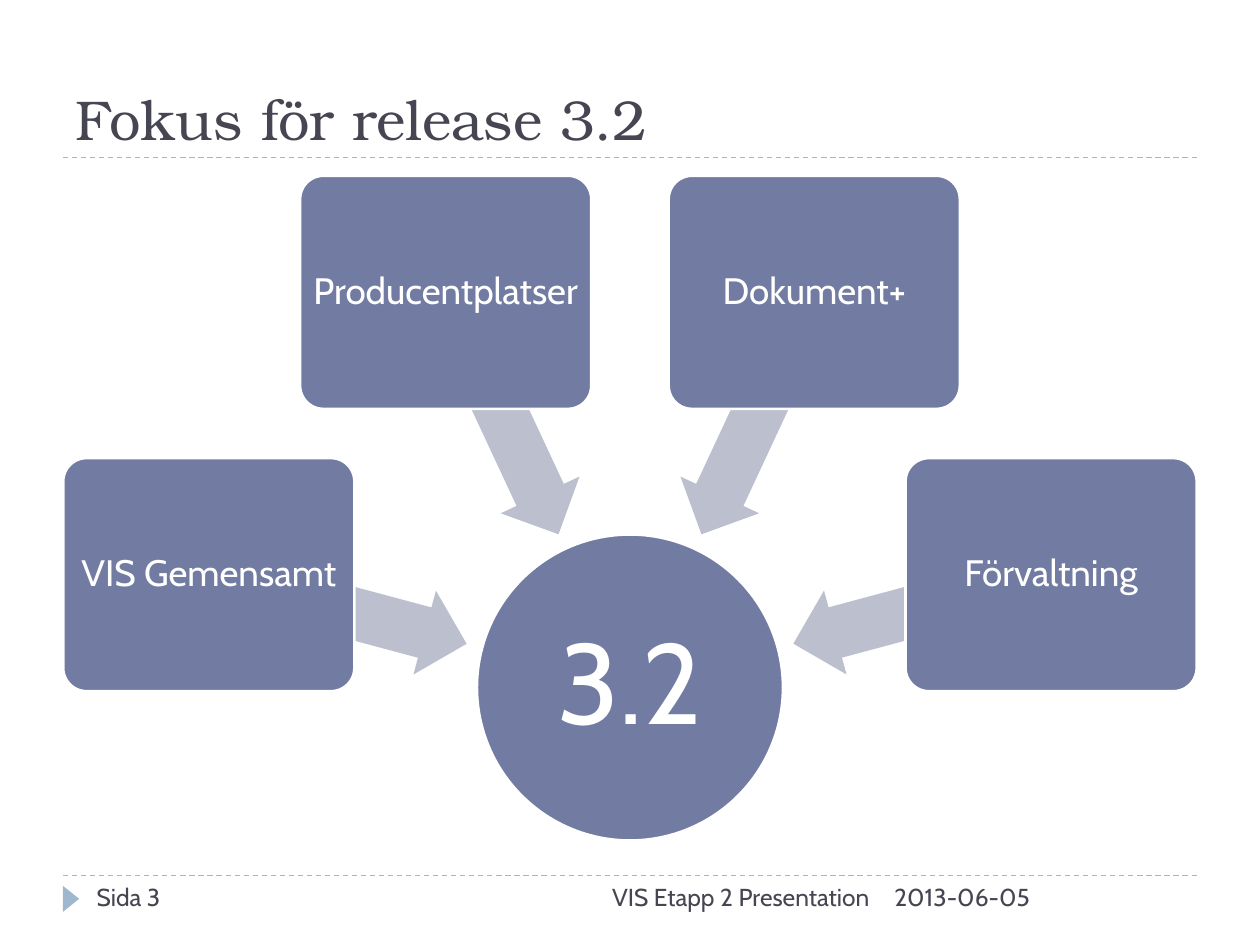
from dataclasses import dataclass
from math import cos, radians, sin

from lxml import etree
from pptx import Presentation
from pptx.dml.color import RGBColor
from pptx.enum.dml import MSO_LINE
from pptx.enum.shapes import MSO_CONNECTOR, MSO_SHAPE
from pptx.enum.text import MSO_ANCHOR, MSO_AUTO_SIZE, PP_ALIGN
from pptx.oxml.ns import qn
from pptx.shapes.autoshape import Shape
from pptx.slide import Slide
from pptx.text.text import TextFrame
from pptx.util import Cm, Pt

LEFT, CENTER, RIGHT = PP_ALIGN.LEFT, PP_ALIGN.CENTER, PP_ALIGN.RIGHT
TOP, MIDDLE, BOTTOM = MSO_ANCHOR.TOP, MSO_ANCHOR.MIDDLE, MSO_ANCHOR.BOTTOM
ROUND, OVAL = MSO_SHAPE.ROUNDED_RECTANGLE, MSO_SHAPE.OVAL
ARROW, MARK = MSO_SHAPE.LEFT_ARROW, MSO_SHAPE.ISOSCELES_TRIANGLE
STRAIGHT, DASH = MSO_CONNECTOR.STRAIGHT, MSO_LINE.DASH
NO_FIT = MSO_AUTO_SIZE.NONE


@dataclass(frozen=True)
class Theme:
    ink: str = "464653"
    main: str = "727CA3"
    pale: str = "BCBFCE"
    rule: str = "9FB8CD"
    white: str = "FFFFFF"
    head: str = "TeX Gyre Bonum"
    body: str = "Cabin"
    title: int = 32
    hub: int = 65
    box: int = 21
    foot: int = 14


@dataclass(frozen=True)
class Topic:
    text: str
    angle: int


@dataclass(frozen=True)
class Note:
    text: str
    left: float
    width: float
    align: PP_ALIGN


THEME = Theme()
TOPICS = [
    Topic("VIS Gemensamt", 195),
    Topic("Producentplatser", 245),
    Topic("Dokument+", 295),
    Topic("Förvaltning", 345),
]
NOTES = [
    Note("2013-06-05", 17.78, 6.35, LEFT),
    Note("VIS Etapp 2 Presentation", 8.05, 9.73, RIGHT),
    Note("Sida 3", 1.7, 5.5, LEFT),
]

EDGE, SPAN = 1.27, 22.86
HEAD_Y, FOOT_Y = 3.18, 17.65
HUB_X, HUB_Y, HUB_D = 12.7, 13.86, 6.17
ORBIT = 8.79
BOX_W, BOX_H = 5.87, 4.7
ARROW_W, ARROW_H = 5.38, 1.75


def write(frame: TextFrame, text: str, size: int, color: str, font: str,
          align: PP_ALIGN, anchor: MSO_ANCHOR) -> None:
    frame.word_wrap = True
    frame.auto_size = NO_FIT
    frame.vertical_anchor = anchor
    para = frame.paragraphs[0]
    para.alignment = align
    run = para.add_run()
    run.text = text
    run.font.size = Pt(size)
    run.font.name = font
    run.font.color.rgb = RGBColor.from_string(color)


def add_form(slide: Slide, kind: MSO_SHAPE, x: float, y: float,
             width: float, height: float, fill: str) -> Shape:
    """Add a plain filled shape centred on x, y."""
    form = slide.shapes.add_shape(kind, Cm(x - width / 2), Cm(y - height / 2),
                                  Cm(width), Cm(height))
    form.shadow.inherit = False
    form.fill.solid()
    form.fill.fore_color.rgb = RGBColor.from_string(fill)
    form.line.fill.background()
    return form


def add_label(form: Shape, text: str, size: int, inset: float) -> None:
    """Give a form its white outline and centred text."""
    form.line.color.rgb = RGBColor.from_string(THEME.white)
    form.line.width = Pt(1.5)
    frame = form.text_frame
    frame.margin_left = frame.margin_right = Cm(inset)
    frame.margin_top = frame.margin_bottom = Cm(inset)
    write(frame, text, size, THEME.white, THEME.body, CENTER, MIDDLE)
    frame.paragraphs[0].line_spacing = 0.9


def add_rule(slide: Slide, y: float) -> None:
    rule = slide.shapes.add_connector(STRAIGHT, Cm(EDGE), Cm(y),
                                      Cm(EDGE + SPAN), Cm(y))
    rule.line.color.rgb = RGBColor.from_string(THEME.rule)
    rule.line.width = Pt(0.75)
    rule.line.dash_style = DASH
    etree.SubElement(rule._element.spPr, qn("a:effectLst"))


def add_title(slide: Slide, text: str) -> None:
    title = slide.shapes.title
    title.left, title.top = Cm(EDGE), Cm(0.43)
    title.width, title.height = Cm(SPAN), Cm(2.75)
    write(title.text_frame, text, THEME.title, THEME.ink, THEME.head,
          LEFT, BOTTOM)


def add_note(slide: Slide, note: Note) -> None:
    box = slide.shapes.add_textbox(Cm(note.left), Cm(FOOT_Y),
                                   Cm(note.width), Cm(1.02))
    write(box.text_frame, note.text, THEME.foot, THEME.ink, THEME.body,
          note.align, TOP)


def add_topic(slide: Slide, topic: Topic) -> None:
    """Place a box on the orbit, with an arrow from its centre to the hub."""
    dx, dy = cos(radians(topic.angle)), sin(radians(topic.angle))
    reach = ORBIT - ARROW_W / 2
    arrow = add_form(slide, ARROW, HUB_X + reach * dx, HUB_Y + reach * dy,
                     ARROW_W, ARROW_H, THEME.pale)
    arrow.adjustments[0] = 0.6
    arrow.adjustments[1] = 0.5
    arrow.rotation = topic.angle
    box = add_form(slide, ROUND, HUB_X + ORBIT * dx, HUB_Y + ORBIT * dy,
                   BOX_W, BOX_H, THEME.main)
    box.adjustments[0] = 0.1
    add_label(box, topic.text, THEME.box, 0.1)


def main() -> None:
    deck = Presentation()
    deck.slide_width, deck.slide_height = Cm(25.4), Cm(19.05)
    slide = deck.slides.add_slide(deck.slide_layouts[5])
    add_title(slide, "Fokus för release 3.2")
    for y in (FOOT_Y, HEAD_Y):
        add_rule(slide, y)
    mark = add_form(slide, MARK, 1.43, 18.12, 0.53, 0.33, THEME.rule)
    mark.rotation = 90
    for note in NOTES:
        add_note(slide, note)
    hub = add_form(slide, OVAL, HUB_X, HUB_Y, HUB_D, HUB_D, THEME.main)
    add_label(hub, "3.2", THEME.hub, 0.13)
    for topic in TOPICS:
        add_topic(slide, topic)
    deck.save("out.pptx")


if __name__ == "__main__":
    main()
